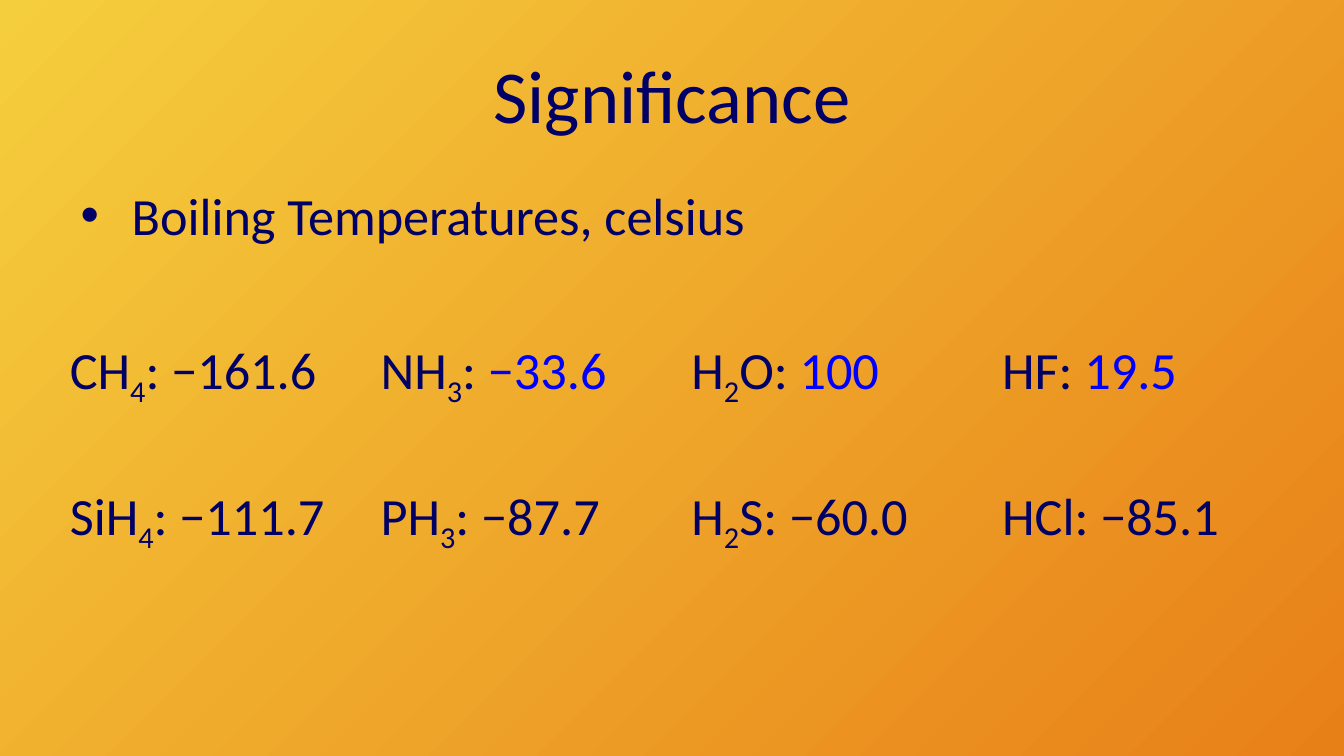
import pptx
import pptx.util
import pptx.dml.color
import pptx.enum.text
import pptx.oxml
import pptx.oxml.ns

Inches, Pt = pptx.util.Inches, pptx.util.Pt
RGB = pptx.dml.color.RGBColor.from_string
Anchor, Align = pptx.enum.text.MSO_ANCHOR, pptx.enum.text.PP_ALIGN

# Content: each compound is (start, subscript, rest, value, highlighted)
TITLE = "Significance"
BULLET = "Boiling Temperatures, celsius"
COMPOUNDS = [
    [("CH", "4", ": ", "−161.6", False), ("NH", "3", ": ", "−33.6", True),
     ("H", "2", "O: ", "100", True), ("HF", "", ": ", "19.5", True)],
    [("SiH", "4", ": ", "−111.7", False), ("PH", "3", ": ", "−87.7", False),
     ("H", "2", "S: ", "−60.0", False), ("HCl", "", ": ", "−85.1", False)],
]
COLORS = {"text": "000066", "highlight": "0000FF",
          "bg_start": "F5CE3D", "bg_end": "E88018"}


def add_run(p, text, size=28, color="text", subscript=False):
    r = p.add_run()
    r.text = text
    for name, value in {"name": "Calibri", "size": Pt(size)}.items():
        setattr(r.font, name, value)
    r.font.color.rgb = RGB(COLORS[color])
    if subscript:
        r._r.get_or_add_rPr().set("baseline", "-25000")


def place(sp, left, top, width, height, anchor):
    box = {"left": left, "top": top, "width": width, "height": height}
    for name, value in box.items():
        setattr(sp, name, Inches(value))
    tf = sp.text_frame
    settings = {"word_wrap": True, "vertical_anchor": anchor,
                "auto_size": pptx.enum.text.MSO_AUTO_SIZE.NONE}
    for name, value in settings.items():
        setattr(tf, name, value)
    return tf.paragraphs[0]


def add_element(parent, xml, index):
    tag, rest = xml.split(" ", 1)
    parent.insert(index, pptx.oxml.parse_xml(
        f"<a:{tag} {pptx.oxml.ns.nsdecls('a')} {rest}"))


def main():
    prs = pptx.Presentation()
    prs.slide_width = Inches(10)
    prs.slide_height = prs.slide_width * 9 // 16
    s = prs.slides.add_slide(prs.slide_layouts[1])

    # Diagonal gradient background
    fill = s.background.fill
    fill.gradient()
    fill.gradient_angle = 315
    for stop, name in zip(fill.gradient_stops, ("bg_start", "bg_end")):
        stop.color.rgb = RGB(COLORS[name])

    # Title
    p = place(s.shapes.title, 0.5, 0.23, 9, 0.94, Anchor.MIDDLE)
    p.alignment = Align.CENTER
    add_run(p, TITLE, size=40)

    # Bullet line
    p = place(s.placeholders[1], 0.5, 1.31, 5.83, 0.83, Anchor.TOP)
    add_run(p, BULLET)
    pPr = p._p.get_or_add_pPr()
    pPr.set("marL", str(Inches(0.38)))
    pPr.set("indent", str(-Inches(0.38)))
    add_element(pPr, 'buChar char="•"/>', 0)
    add_element(pPr, 'spcBef ><a:spcPct val="20000"/></a:spcBef>', 0)

    # Table of boiling temperatures
    rows, cols = len(COMPOUNDS), len(COMPOUNDS[0])
    table = s.shapes.add_table(rows, cols, Inches(0.42), Inches(2.48),
                               Inches(9.25), Inches(2.17)).table
    table.first_row = table.horz_banding = False
    for i, row in enumerate(COMPOUNDS):
        for j, (start, sub, rest, value, highlighted) in enumerate(row):
            cell = table.cell(i, j)
            cell.fill.background()
            for k, side in enumerate(("lnL", "lnR", "lnT", "lnB")):
                add_element(cell._tc.get_or_add_tcPr(),
                            f'{side} w="0"><a:noFill/></a:{side}>', k)
            p = cell.text_frame.paragraphs[0]
            add_run(p, start)
            if sub:
                add_run(p, sub, subscript=True)
            add_run(p, rest)
            add_run(p, value, color="highlight" if highlighted else "text")

    prs.save("out.pptx")


if __name__ == "__main__":
    main()
